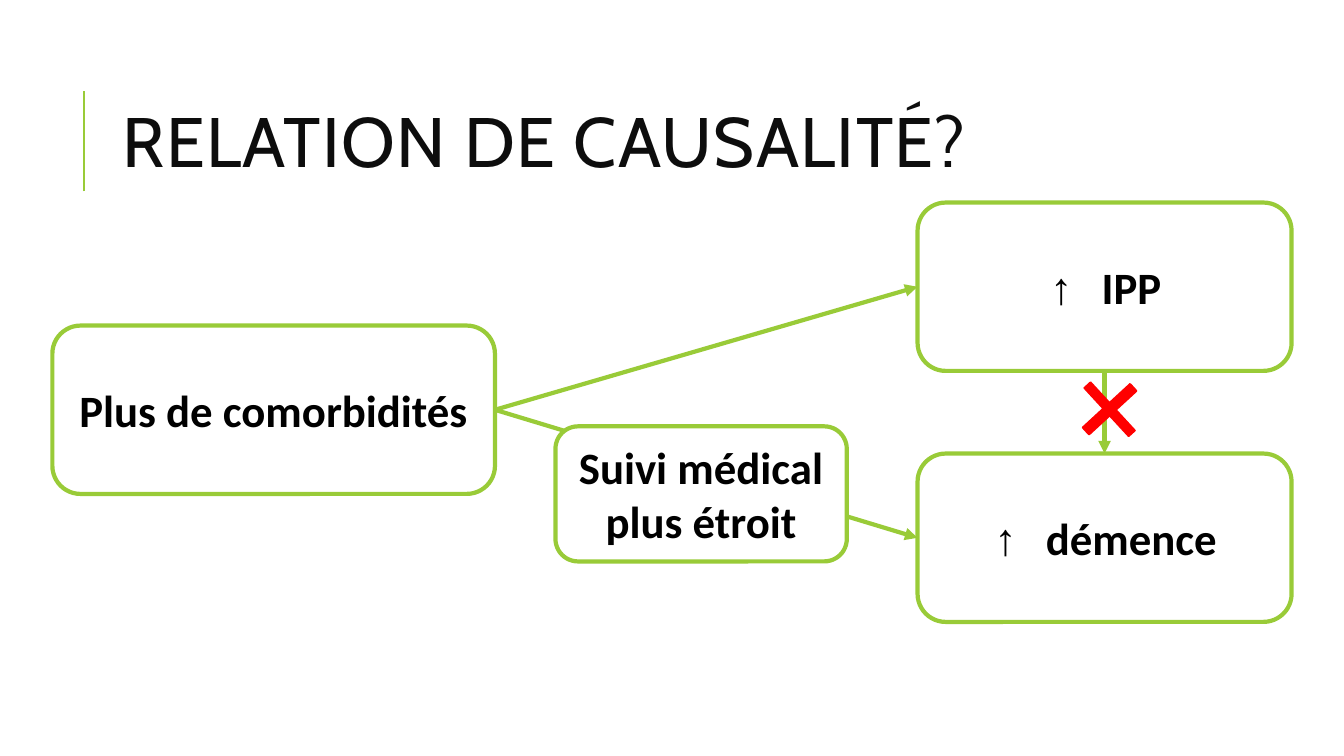
from lxml.etree import SubElement
from pptx import Presentation
from pptx.dml.color import RGBColor
from pptx.enum.shapes import MSO_CONNECTOR, MSO_SHAPE
from pptx.enum.text import MSO_ANCHOR, PP_ALIGN
from pptx.oxml.ns import qn
from pptx.util import Inches, Pt

GREEN, RED, WHITE, BLACK, INK = "99CB38", "FF0000", "FFFFFF", "000000", "0D0D0D"

prs = Presentation()
prs.slide_width, prs.slide_height = Inches(13.33), Inches(7.5)
s = prs.slides.add_slide(prs.slide_layouts[6])


def place(x, y):
    """Turn percentages of the slide's width and height into lengths."""
    return round(prs.slide_width * x / 100), round(prs.slide_height * y / 100)


def paint(fmt, color):
    """Give a fill or font a solid colour."""
    if hasattr(fmt, "solid"):
        fmt.solid()
        fmt.fore_color.rgb = RGBColor.from_string(color)
    else:
        fmt.color.rgb = RGBColor.from_string(color)


# Title
tb = s.shapes.add_textbox(*place(8.4, 8.53), *place(79.74, 21.87))
tf = tb.text_frame
tf.word_wrap = True
tf.vertical_anchor = MSO_ANCHOR.MIDDLE
p = tf.paragraphs[0]
p.line_spacing = 0.8
r = p.add_run()
r.text = "RELATION DE CAUSALITÉ?"
r.font.name, r.font.size = "Cabin", Pt(50)
paint(r.font, INK)
r.font._element.set("spc", "100")

# Boxes: key, left, top, width, height, whether an up arrow leads the label
boxes = {}
for label, x, y, w, h, rising in [
    ("Plus de comorbidités", 3.9, 43.07, 32.93, 22.27, False),
    ("IPP", 68.27, 26.8, 27.83, 22.27, True),
    ("démence", 68.27, 60, 27.83, 22.27, True),
    ("Suivi médical plus étroit", 41.33, 56.4, 21.68, 17.87, False),
]:
    sp = s.shapes.add_shape(MSO_SHAPE.ROUNDED_RECTANGLE, *place(x, y), *place(w, h))
    sp.shadow.inherit = False
    paint(sp.fill, WHITE)
    paint(sp.line.fill, GREEN)
    sp.line.width = Pt(3)
    tf = sp.text_frame
    tf.word_wrap = True
    tf.vertical_anchor = MSO_ANCHOR.MIDDLE
    p = tf.paragraphs[0]
    p.alignment = PP_ALIGN.CENTER
    p.font.size, p.font.bold = Pt(32), True
    runs = [("↑ ", "Noto Sans Mono")] if rising else []
    for text, font in runs + [(label, "Calibri")]:
        r = p.add_run()
        r.text = text
        r.font.name, r.font.size, r.font.bold = font, Pt(32), True
        paint(r.font, BLACK)
    boxes[label] = sp

# Accent line beside the title, then arrows between box sides
accent = s.shapes.add_connector(MSO_CONNECTOR.STRAIGHT, *place(6.23, 25.33), *place(6.23, 12))
lines = [(accent, 1.5)]
for start, side, end, end_side in [
    ("Plus de comorbidités", 3, "démence", 1),
    ("Plus de comorbidités", 3, "IPP", 1),
    ("IPP", 2, "démence", 0),
]:
    arrow = s.shapes.add_connector(MSO_CONNECTOR.STRAIGHT, 0, 0, 0, 0)
    arrow.begin_connect(boxes[start], side)
    arrow.end_connect(boxes[end], end_side)
    lines.append((arrow, 3))

for line, width in lines:
    paint(line.line.fill, GREEN)
    line.line.width = Pt(width)
    if line is not accent:
        SubElement(line.line._get_or_add_ln(), qn("a:tailEnd"), type="triangle")
    SubElement(line._element.spPr, qn("a:effectLst"))

# Red cross over the link from IPP to démence
cross = s.shapes.add_shape(MSO_SHAPE.CROSS, *place(80.12, 49.87), *place(4.88, 8.53))
cross.adjustments[0] = 0.434
cross.rotation = 47.4
cross.shadow.inherit = False
paint(cross.fill, RED)
paint(cross.line.fill, RED)
cross.line.width = Pt(1.25)

# The follow-up box lies over the arrow to démence
s.shapes._spTree.append(boxes["Suivi médical plus étroit"]._element)

prs.save("out.pptx")
